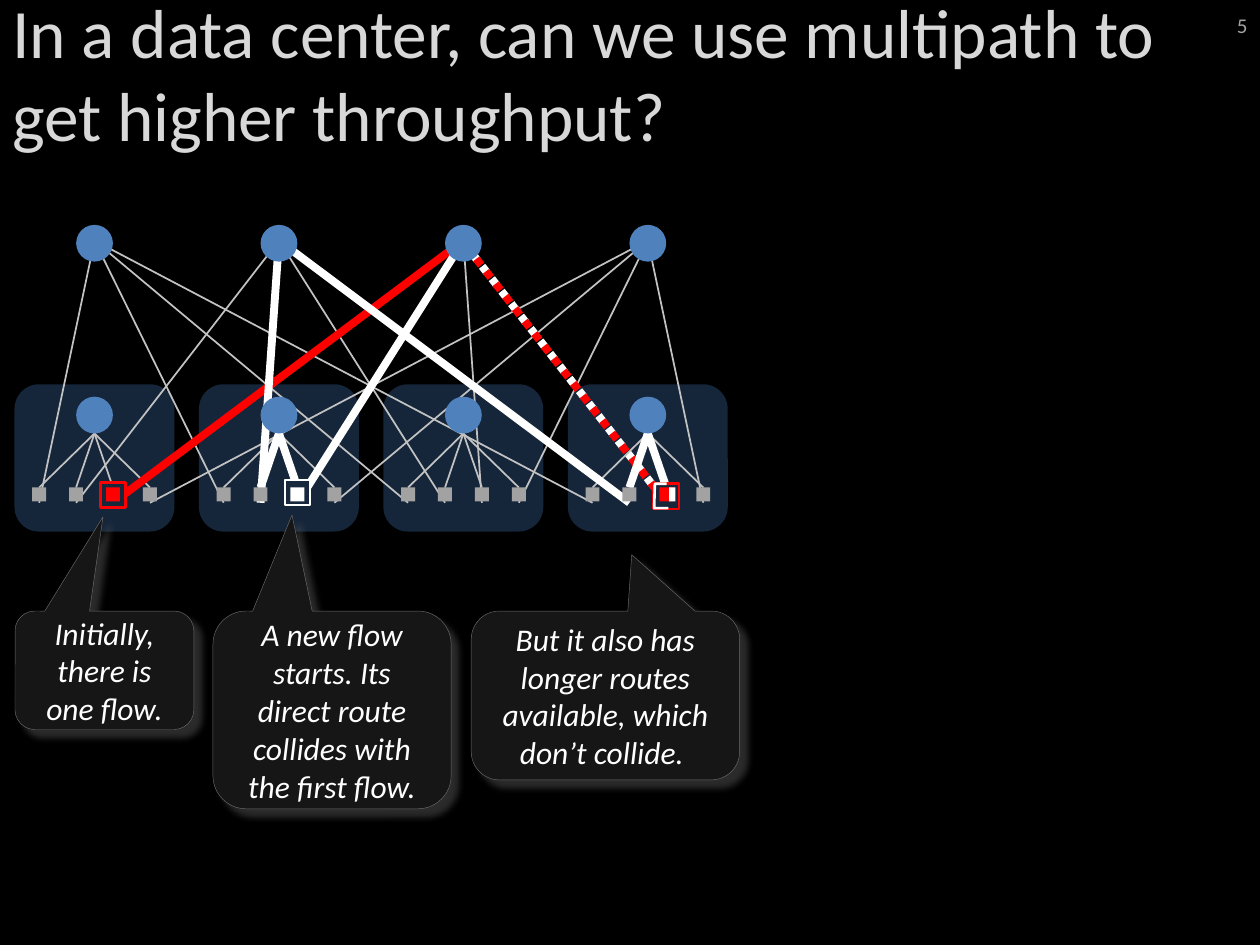
from itertools import product
from lxml import etree
from pptx import Presentation
from pptx.dml.color import RGBColor
from pptx.enum.dml import MSO_LINE_DASH_STYLE as Dash
from pptx.enum.shapes import MSO_CONNECTOR as Connector, MSO_SHAPE as Shape
from pptx.enum.text import MSO_ANCHOR as Anchor, PP_ALIGN as Align
from pptx.oxml.ns import qn
from pptx.util import Pt

RED, WHITE, GREY, BLUE, THIN = "FF0000", "FFFFFF", "A2A2A2", "4F81BD", "C2C2C2"
POD_PITCH, HOST_PITCH = 105.4, 21.1
FIRST_SWITCH_X, FIRST_HOST_X = 54, 22.4
CORE_Y, AGG_Y, HOST_TOP = 139, 237.2, 278.6
DIRECT_FLOWS = {(1, 1), (1, 2), (3, 1), (3, 2)}
CORE_FLOWS = {(0, 2): RED, (1, 1): WHITE, (1, 2): WHITE, (3, 1): WHITE}
SHARED_LINK = (3, 2)
HOST_COLORS = {(0, 2): RED, (1, 2): WHITE, (3, 2): RED}


def color(hex_string):
    """Turn a hex string into a colour."""
    return RGBColor.from_string(hex_string)


def switch_x(i):
    """Give the centre of switch column i."""
    return FIRST_SWITCH_X + POD_PITCH * i


def host_x(pod, host):
    """Give the centre of a host in a pod."""
    return FIRST_HOST_X + POD_PITCH * pod + HOST_PITCH * host


def add_box(s, kind, x, y, w, h, fill, line=None, width=1.5, alpha=None):
    """Add a filled preset shape."""
    sp = s.shapes.add_shape(kind, Pt(x), Pt(y), Pt(w), Pt(h))
    sp.shadow.inherit = False
    sp.fill.solid()
    sp.fill.fore_color.rgb = color(fill)
    if alpha:
        clr = sp._element.spPr.find(qn("a:solidFill"))[0]
        etree.SubElement(clr, qn("a:alpha")).set("val", str(alpha * 1000))
    if line:
        sp.line.color.rgb = color(line)
        sp.line.width = Pt(width)
    else:
        sp.line.fill.background()
    return sp


def add_link(s, x1, y1, x2, y2, stroke=THIN, width=1, dash=None):
    """Add a straight line without shadow."""
    cx = s.shapes.add_connector(Connector.STRAIGHT, Pt(x1), Pt(y1), Pt(x2), Pt(y2))
    cx.line.color.rgb = color(stroke)
    cx.line.width = Pt(width)
    if dash:
        cx.line.dash_style = dash
    etree.SubElement(cx._element.spPr, qn("a:effectLst"))


def set_text(sp, text, size, fill, align, italic=False):
    """Write one styled paragraph into a shape."""
    tf = sp.text_frame
    tf.word_wrap = True
    tf.vertical_anchor = Anchor.MIDDLE
    p = tf.paragraphs[0]
    p.text = text
    p.alignment = align
    p.font.name = "Calibri"
    p.font.size = Pt(size)
    p.font.italic = italic
    p.font.color.rgb = color(fill)


def add_text(s, x, y, w, h, *style):
    """Add a text box."""
    set_text(s.shapes.add_textbox(Pt(x), Pt(y), Pt(w), Pt(h)), *style)


def add_callout(s, x, w, h, tip, text):
    """Add a speech bubble with a soft shadow."""
    sp = add_box(s, Shape.ROUNDED_RECTANGULAR_CALLOUT, x, 349.2, w, h,
                 "161616", "6C6C6C", 0.25)
    for i, value in enumerate((*tip, 0.167)):
        sp.adjustments[i] = value
    effects = sp._element.spPr.find(qn("a:effectLst"))
    shadow = etree.SubElement(effects, qn("a:outerShdw"), blurRad=str(Pt(4)),
                              dist=str(Pt(6)), dir="2700000", algn="tl", rotWithShape="0")
    clr = etree.SubElement(shadow, qn("a:srgbClr"), val="6C6C6C")
    etree.SubElement(clr, qn("a:alpha"), val="40000")
    set_text(sp, text, 18, WHITE, Align.CENTER, True)


def add_links(s):
    """Draw the thin links, then the flows on top of them."""
    add_link(s, 378, 283.7, 268.6, 143.3, WHITE, 4.5, Dash.ROUND_DOT)
    flows = []
    for pod, host in product(range(4), repeat=2):
        x = host_x(pod, host)
        direct = (x, HOST_TOP, switch_x(pod), 247.7)
        core = (x, 287.3, switch_x(host), 137.5)
        if (pod, host) in DIRECT_FLOWS:
            flows.append((*direct, WHITE, 4.5))
        else:
            add_link(s, *direct)
        if (pod, host) in CORE_FLOWS:
            flows.append((*core, CORE_FLOWS[pod, host], 4.5))
        elif (pod, host) != SHARED_LINK:
            add_link(s, *core)
    add_link(s, 380.2, 286.6, 263.5, 136.8, RED, 4.5, Dash.ROUND_DOT)
    for flow in flows:
        add_link(s, *flow)


def add_hosts(s):
    """Draw the hosts and the frames round the flow ends."""
    for pod, y, line in ((0, 275.8, RED), (3, 276.5, RED), (1, 274.3, WHITE)):
        add_box(s, Shape.RECTANGLE, host_x(pod, 2) - 7.2, y, 14.4, 14.4, "17283D", line)
    for end in product(range(4), repeat=2):
        add_box(s, Shape.RECTANGLE, host_x(*end) - 4, HOST_TOP, 8, 8,
                HOST_COLORS.get(end, GREY))
    add_box(s, Shape.RECTANGLE, 382.3, HOST_TOP, 3.6, 8, WHITE)
    builder = s.shapes.build_freeform(Pt(380.9), Pt(276.5))
    builder.add_line_segments([(Pt(x), Pt(y)) for x, y in
                               ((374.2, 276.5), (373.8, 290.4), (382, 290.4))], close=False)
    half = builder.convert_to_shape()
    half.shadow.inherit = False
    half.fill.background()
    half.line.color.rgb = color(WHITE)
    half.line.width = Pt(1.5)


def main():
    """Build the slide."""
    prs = Presentation()
    prs.slide_width, prs.slide_height = Pt(720), Pt(540)
    s = prs.slides.add_slide(prs.slide_layouts[6])
    s.background.fill.solid()
    s.background.fill.fore_color.rgb = color("000000")
    for i in range(4):
        add_box(s, Shape.ROUNDED_RECTANGLE, switch_x(i) - 45.7, 219.6, 91.4, 84.2,
                "254061", alpha=60)
    add_links(s)
    add_text(s, 0, 0, 720, 82.8,
             "In a data center, can we use multipath to get higher throughput?",
             39.6, "D8D8D8", Align.LEFT)
    add_text(s, 660, 0, 60, 28.8, "5", 12, GREY, Align.RIGHT)
    for y, i in product((AGG_Y, CORE_Y), range(4)):
        add_box(s, Shape.OVAL, switch_x(i) - 10.5, y - 10.5, 21, 21, BLUE)
    add_hosts(s)
    add_callout(s, 8.6, 102.2, 67.7, (-0.008, -1.296), "Initially, there is one flow.")
    add_callout(s, 121.7, 136.1, 113, (-0.168, -0.986),
                "A new flow starts. Its direct route collides with the first flow.")
    add_callout(s, 269.3, 153.4, 96.5, (0.098, -0.834),
                "But it also has longer routes available, which don’t collide. ")
    prs.save("out.pptx")


if __name__ == "__main__":
    main()
